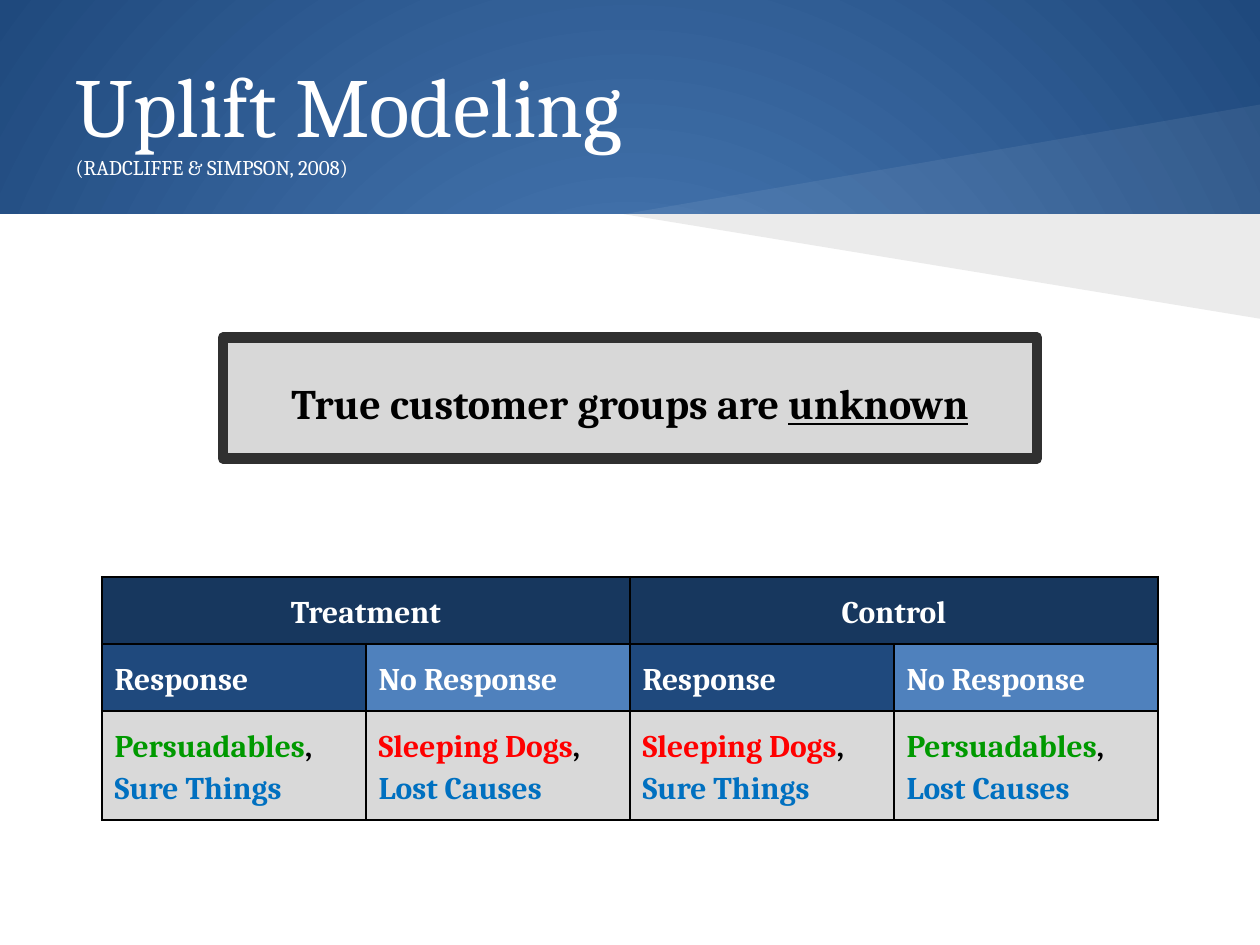
from lxml import etree
from pptx import Presentation
from pptx.dml.color import RGBColor
from pptx.enum import shapes, text
from pptx.oxml import parse_xml
from pptx.oxml.ns import nsdecls, qn
from pptx.util import Inches, Pt

FONT = "Cambria"
WHITE, BLACK, GREEN, RED, BLUE = "FFFFFF", "000000", "009900", "FF0000", "0070C0"


def paint(target, color):
    """Give a fill one solid colour, or a font its colour."""
    if hasattr(target, "solid"):
        target.solid()
        target.fore_color.rgb = RGBColor.from_string(color)
    else:
        target.color.rgb = RGBColor.from_string(color)


def style(paragraph, size, color, bold, spacing, align):
    paragraph.font.name = FONT
    paragraph.font.size = Pt(size)
    paragraph.font.bold = bold
    paint(paragraph.font, color)
    paragraph.line_spacing = spacing
    paragraph.alignment = align


presentation = Presentation()
presentation.slide_width, presentation.slide_height = Inches(10), Inches(7.5)
slide = presentation.slides.add_slide(presentation.slide_layouts[5])
LEFT, CENTER = text.PP_ALIGN.LEFT, text.PP_ALIGN.CENTER

# Radial blue background
background = slide.background.fill
background.gradient()
for stop, color in zip(background.gradient_stops, ("4F81BD", "1F497D")):
    stop.color.rgb = RGBColor.from_string(color)
linear = next(slide.background._cSld.iter(qn("a:lin")))
linear.getparent().replace(linear, parse_xml(
    f'<a:path {nsdecls("a")} path="circle">'
    '<a:fillToRect l="50000" t="50000" r="50000" b="50000"/></a:path>'))

# White body below the header, with a translucent wedge on each side of its edge
body = slide.shapes.add_shape(
    shapes.MSO_SHAPE.RECTANGLE, 0, Inches(1.7), Inches(10), Inches(5.8))
paint(body.fill, WHITE)
body.line.fill.background()
body.shadow.inherit = False

for tip, color, alpha in ((0.83, WHITE, 7), (2.53, BLACK, 8)):
    builder = slide.shapes.build_freeform(Inches(10), Inches(1.7))
    builder.add_line_segments([(Inches(4.95), Inches(1.7)), (Inches(10), Inches(tip))])
    wedge = builder.convert_to_shape()
    paint(wedge.fill, color)
    wedge.line.fill.background()
    wedge.shadow.inherit = False
    fill_color = next(wedge._element.spPr.iter(qn("a:srgbClr")))
    etree.SubElement(fill_color, qn("a:alpha"), val=str(alpha * 1000))

# Title, brought in front of the body and wedges
title = slide.shapes.title
slide.shapes._spTree.append(title._element)
title.left, title.top, title.width, title.height = map(Inches, (0.5, 0.3, 9, 1.25))
frame = title.text_frame
frame.vertical_anchor = text.MSO_ANCHOR.MIDDLE
frame.margin_left = frame.margin_right = frame.margin_top = frame.margin_bottom = Inches(0.1)
paragraph = frame.paragraphs[0]
style(paragraph, 48, WHITE, False, 1.0, LEFT)
heading = paragraph.add_run()
heading.text = "Uplift Modeling"
heading.font.size = Pt(48)
paragraph.add_line_break()
citation = paragraph.add_run()
citation.text = "(RADCLIFFE & SIMPSON, 2008)"
citation.font.size = Pt(12)

# Key message
message = slide.shapes.add_shape(
    shapes.MSO_SHAPE.RECTANGLE, Inches(1.77), Inches(2.68), Inches(6.46), Inches(0.96))
paint(message.fill, "D8D8D8")
paint(message.line.fill, "303030")
message.line.width = Pt(6)
message.shadow.inherit = False
frame = message.text_frame
frame.vertical_anchor = text.MSO_ANCHOR.MIDDLE
frame.margin_top = frame.margin_bottom = Inches(0.1)
paragraph = frame.paragraphs[0]
style(paragraph, 24, BLACK, True, 1.2, CENTER)
paragraph.add_run().text = "True customer groups are "
unknown = paragraph.add_run()
unknown.text = "unknown"
unknown.font.underline = True

# Customer groups: each cell is a list of lines, each line a list of (text, colour)
persuadables = [("Persuadables", GREEN), (",", BLACK)]
sleeping_dogs = [("Sleeping Dogs", RED), (",", BLACK)]
sure_things = [("Sure Things", BLUE)]
lost_causes = [("Lost Causes", BLUE)]
treatment, control, response, no_response = (
    [[(label, WHITE)]] for label in ("Treatment", "Control", "Response", "No Response"))
rows = [
    (0.53, ["17375E"] * 4, CENTER, [treatment, [], control, []]),
    (0.53, ["1F497D", "4F81BD"] * 2, LEFT, [response, no_response] * 2),
    (0.86, ["D9D9D9"] * 4, LEFT, [
        [persuadables, sure_things], [sleeping_dogs, lost_causes],
        [sleeping_dogs, sure_things], [persuadables, lost_causes]]),
]
table = slide.shapes.add_table(
    3, 4, Inches(0.81), Inches(4.58), Inches(8.38), Inches(1.92)).table
for column in table.columns:
    column.width = Inches(2.095)

for row_index, (height, fills, align, contents) in enumerate(rows):
    table.rows[row_index].height = Inches(height)
    for column_index, (fill, lines) in enumerate(zip(fills, contents)):
        cell = table.cell(row_index, column_index)
        paint(cell.fill, fill)
        cell.margin_left = cell.margin_right = Inches(0.1)
        cell.margin_top = cell.margin_bottom = Inches(0.1)
        for position, side in enumerate(("lnL", "lnR", "lnT", "lnB")):
            cell._tc.tcPr.insert(position, parse_xml(
                f'<a:{side} {nsdecls("a")} w="{Pt(1.5)}"><a:solidFill>'
                f'<a:srgbClr val="{BLACK}"/></a:solidFill></a:{side}>'))
        for line_index, line in enumerate(lines):
            frame = cell.text_frame
            paragraph = frame.add_paragraph() if line_index else frame.paragraphs[0]
            style(paragraph, 18, line[0][1], True, 1.15, align)
            for words, color in line:
                run = paragraph.add_run()
                run.text = words
                paint(run.font, color)

for first in (0, 2):
    table.cell(0, first).merge(table.cell(0, first + 1))

presentation.save("out.pptx")
